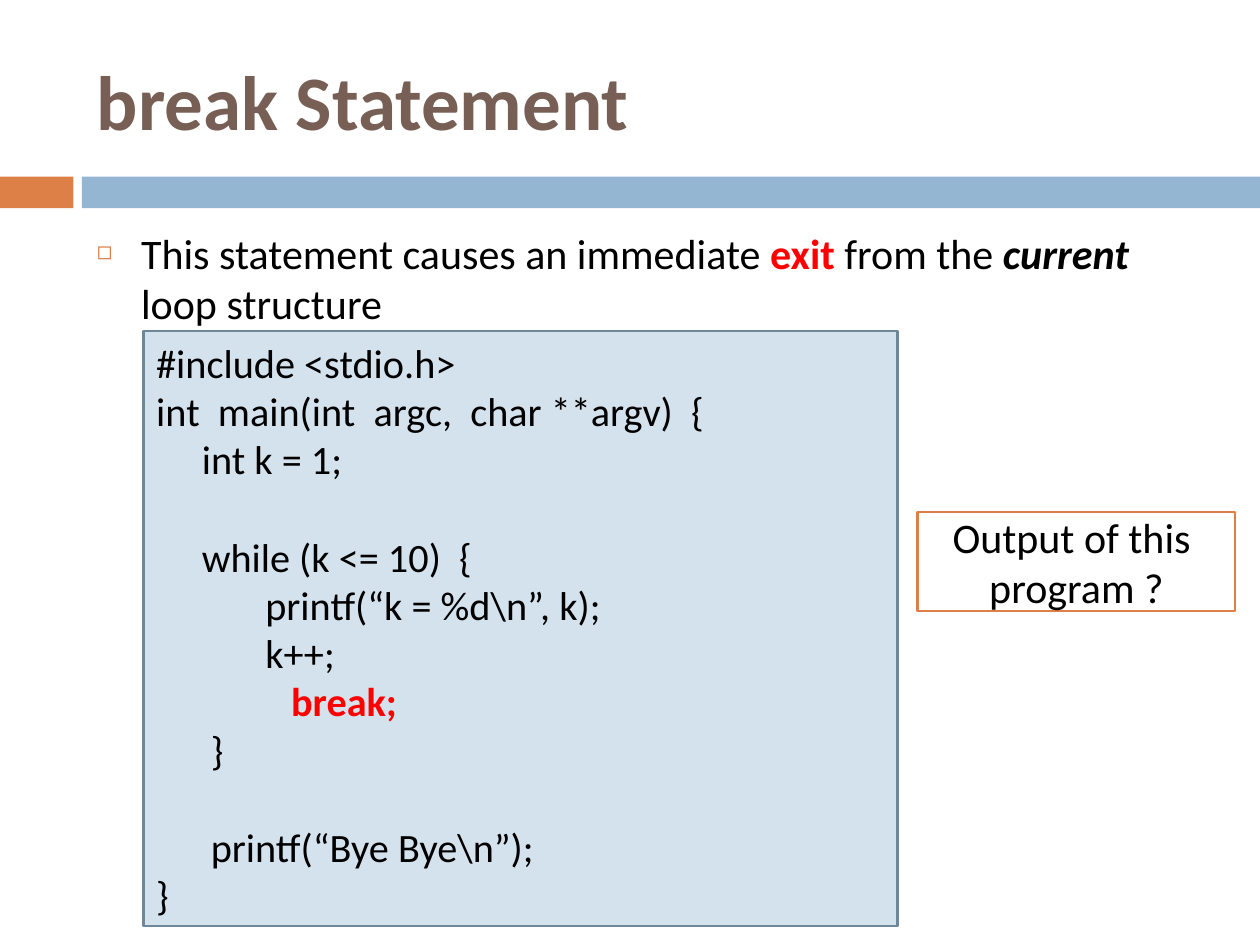
from lxml.etree import SubElement
from pptx import Presentation
from pptx.dml.color import RGBColor
from pptx.enum.shapes import MSO_SHAPE
from pptx.enum.text import MSO_ANCHOR, MSO_AUTO_SIZE, PP_ALIGN
from pptx.oxml.ns import qn
from pptx.util import Cm, Pt

ORANGE = RGBColor(0xDD, 0x80, 0x47)
BLUE = RGBColor(0x94, 0xB6, 0xD2)
PALE_BLUE = RGBColor(0xD4, 0xE2, 0xED)
SLATE = RGBColor(0x6D, 0x87, 0x9B)
BROWN = RGBColor(0x77, 0x5F, 0x55)
RED = RGBColor(0xFF, 0, 0)
BLACK = RGBColor(0, 0, 0)
WHITE = RGBColor(0xFF, 0xFF, 0xFF)

CODE_SIZE = 23
CODE_LINE = Pt(28)
# Each line: indent in cm, empty lines above, text, font changes
CODE = [
    (0, 0, "#include <stdio.h>", {}),
    (0, 0, "int  main(int  argc,  char **argv)  {", {}),
    (0.92, 0, "int k = 1;", {}),
    (0.92, 1, "while (k <= 10)  {", {}),
    (2.2, 0, "printf(“k = %d\\n”, k);", {}),
    (2.2, 0, "k++;", {}),
    (2.72, 0, "break;", {"color": RED, "bold": True}),
    (1.1, 0, "}", {}),
    (1.1, 1, "printf(“Bye Bye\\n”);", {}),
    (0, 0, "}", {}),
]


def add_run(p, text, size, color=BLACK, **font):
    r = p.add_run()
    r.text = text
    r.font.color.rgb = color
    for name, value in {"name": "Calibri", "size": Pt(size), **font}.items():
        setattr(r.font, name, value)


def place(sp, box):
    for name, value in zip(("left", "top", "width", "height"), box):
        setattr(sp, name, Cm(value))


def add_rect(s, box, fill, line=None):
    sp = s.shapes.add_shape(MSO_SHAPE.RECTANGLE, *map(Cm, box))
    sp.shadow.inherit = False
    sp.fill.solid()
    sp.fill.fore_color.rgb = fill
    if line is None:
        sp.line.fill.background()
    else:
        sp.line.color.rgb = line
        sp.line.width = Pt(1.5)
    sp.text_frame.vertical_anchor = MSO_ANCHOR.MIDDLE
    return sp


def add_band(s, box):
    left, top, width, height = box
    tab, gap = 1.48, 0.17
    add_rect(s, (left, top, tab, height), ORANGE)
    add_rect(s, (left + tab + gap, top, width - tab - gap, height), BLUE)


def fill_title(s, box):
    sp = s.shapes.title
    place(sp, box)
    tf = sp.text_frame
    tf.vertical_anchor = MSO_ANCHOR.MIDDLE
    tf.auto_size = MSO_AUTO_SIZE.NONE
    p = tf.paragraphs[0]
    p.alignment = PP_ALIGN.LEFT
    add_run(p, "break Statement", 44, BROWN, bold=True)


def fill_body(s, box):
    sp = s.placeholders[1]
    place(sp, box)
    tf = sp.text_frame
    tf.auto_size = MSO_AUTO_SIZE.NONE
    p = tf.paragraphs[0]
    p.space_before = Pt(7)
    # Hollow square bullet
    pPr = p._p.get_or_add_pPr()
    pPr.set("marL", str(Cm(0.89)))
    pPr.set("indent", str(-Cm(0.89)))
    color = SubElement(pPr, qn("a:buClr"))
    SubElement(color, qn("a:srgbClr"), val=str(ORANGE))
    SubElement(pPr, qn("a:buSzPct"), val="60000")
    SubElement(pPr, qn("a:buChar"), char="◻")
    for text, font in (
        ("This statement causes an immediate ", {}),
        ("exit", {"color": RED, "bold": True}),
        (" from the ", {}),
        ("current", {"bold": True, "italic": True}),
        (" loop structure", {}),
    ):
        add_run(p, text, 24, **font)


def add_lines(tf, lines, size, alignment):
    for i, (indent, gap, text, font) in enumerate(lines):
        p = tf.add_paragraph() if i else tf.paragraphs[0]
        p.alignment = alignment
        p.space_before = gap * CODE_LINE
        p._p.get_or_add_pPr().set("marL", str(Cm(indent)))
        add_run(p, text, size, **font)


def add_code(s, box):
    sp = add_rect(s, box, PALE_BLUE, SLATE)
    add_lines(sp.text_frame, CODE, CODE_SIZE, PP_ALIGN.LEFT)


def add_question(s, box):
    sp = add_rect(s, box, WHITE, ORANGE)
    lines = [(0, 0, text, {}) for text in ("Output of this ", "program ?")]
    add_lines(sp.text_frame, lines, 24, PP_ALIGN.CENTER)


def main():
    prs = Presentation()
    prs.slide_width, prs.slide_height = Cm(25.4), Cm(19.05)
    s = prs.slides.add_slide(prs.slide_layouts[1])
    add_band(s, (0, 3.56, 25.4, 0.64))
    fill_title(s, (1.7, 0.64, 22.66, 2.74))
    fill_body(s, (1.7, 4.45, 22.66, 12.5))
    add_code(s, (2.9, 6.67, 15.2, 12))
    add_question(s, (18.5, 10.32, 6.4, 2))
    prs.save("out.pptx")


if __name__ == "__main__":
    main()
